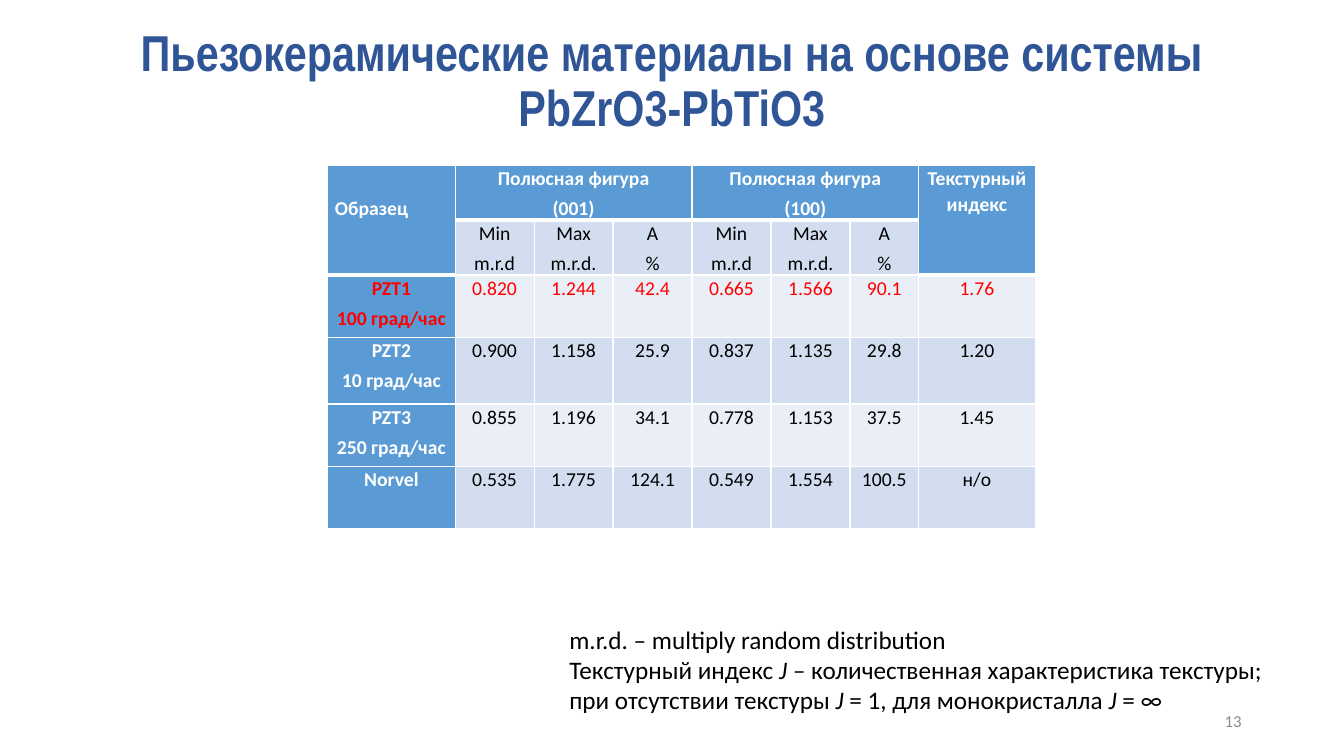
"""Build the slide on the texture of PbZrO3-PbTiO3 piezoceramic materials."""
from lxml import etree
from pptx import Presentation
from pptx.dml.color import RGBColor
from pptx.enum.text import MSO_ANCHOR, PP_ALIGN
from pptx.oxml.ns import qn
from pptx.util import Cm, Pt

LEFT, CENTER, RIGHT = PP_ALIGN.LEFT, PP_ALIGN.CENTER, PP_ALIGN.RIGHT
TOP, MIDDLE = MSO_ANCHOR.TOP, MSO_ANCHOR.MIDDLE
BLUE, RED, WHITE, BLACK = "5B9BD5", "FF0000", "FFFFFF", "000000"
BANDS = ["D2DEEF", "EAEFF7"]


def set_font(font, size, color, bold=False, name="Calibri"):
    font.name, font.size, font.bold = name, Pt(size), bold
    font.color.rgb = RGBColor.from_string(color)


def add_text(left, top, width, height, anchor):
    box = page.shapes.add_textbox(Cm(left), Cm(top), Cm(width), Cm(height))
    box.text_frame.word_wrap = True
    box.text_frame.vertical_anchor = anchor
    return box.text_frame


deck = Presentation()
deck.slide_width, deck.slide_height = Cm(33.87), Cm(19.05)
page = deck.slides.add_slide(deck.slide_layouts[6])

title = add_text(2.33, 0.64, 29.21, 2.9, MIDDLE).paragraphs[0]
title.text = "Пьезокерамические материалы на основе системы PbZrO3-PbTiO3"
title.alignment, title.line_spacing = CENTER, 0.9
set_font(title.font, 36, "2F5597", True, "Arial Narrow")

number = add_text(23.92, 17.66, 7.62, 1.01, MIDDLE).paragraphs[0]
number.text = "13"
number.alignment = RIGHT
set_font(number.font, 12, "8C8C8C")

measures = ["Min\nm.r.d", "Max\nm.r.d.", "A\n%"]
rows = [
    ["Образец", "Полюсная фигура\n(001)", "", "", "Полюсная фигура\n(100)", "", "", "Текстурный индекс"],
    ["", *measures, *measures, ""],
    ["PZT1\n100 град/час", "0.820", "1.244", "42.4", "0.665", "1.566", "90.1", "1.76"],
    ["PZT2\n10 град/час", "0.900", "1.158", "25.9", "0.837", "1.135", "29.8", "1.20"],
    ["PZT3\n250 град/час", "0.855", "1.196", "34.1", "0.778", "1.153", "37.5", "1.45"],
    ["Norvel", "0.535", "1.775", "124.1", "0.549", "1.554", "100.5", "н/о"],
]
column_widths = [3.21, 1.99, 1.99, 1.99, 1.99, 1.99, 1.73, 2.94]
row_heights = [1.3, 1.27, 1.57, 1.68, 1.57, 1.57]
table = page.shapes.add_table(
    len(rows), len(column_widths), Cm(8.26), Cm(4.17), Cm(sum(column_widths)), Cm(sum(row_heights))
).table
for column, width in zip(table.columns, column_widths):
    column.width = Cm(width)
for row, height in zip(table.rows, row_heights):
    row.height = Cm(height)

for r, values in enumerate(rows):
    for c, value in enumerate(values):
        cell = table.cell(r, c)
        tall_header = r < 2 and c in (0, 7)
        heading = r == 0 or c == 0 or tall_header
        cell.margin_left = cell.margin_right = Cm(0.18)
        cell.margin_top = Cm(0.75 if r == c == 0 else 0)
        cell.margin_bottom = Cm(0)
        properties = cell._tc.get_or_add_tcPr()
        for side in ("lnL", "lnR", "lnT", "lnB"):
            thick = side == "lnB" and (r == 0 or tall_header)
            line = etree.SubElement(properties, qn(f"a:{side}"), w=str(Pt(3 if thick else 1)))
            fill = etree.SubElement(line, qn("a:solidFill"))
            etree.SubElement(fill, qn("a:srgbClr"), val=WHITE)
        cell.fill.solid()
        cell.fill.fore_color.rgb = RGBColor.from_string(BLUE if heading else BANDS[(r + 1) % 2])
        cell.text = value
        color = RED if r == 2 else WHITE if heading else BLACK
        for para in cell.text_frame.paragraphs:
            para.alignment = LEFT if r == c == 0 else CENTER
            para.line_spacing, para.space_before = 1.07, Pt(3)
            set_font(para.font, 14, color, heading)

for first, last in [((0, 0), (1, 0)), ((0, 1), (0, 3)), ((0, 4), (0, 6)), ((0, 7), (1, 7))]:
    table.cell(*first).merge(table.cell(*last))

notes = [
    [("m.r.d. – multiply random distribution", False)],
    [("Текстурный индекс ", False), ("J – ", True), ("количественная характеристика текстуры;", False)],
    [("при отсутствии текстуры ", False), ("J ", True), ("= 1, для монокристалла ", False),
     ("J ", True), ("= ∞", False)],
]
legend = add_text(14.1, 15.6, 18.34, 2.57, TOP)
for i, spans in enumerate(notes):
    para = legend.add_paragraph() if i else legend.paragraphs[0]
    set_font(para.font, 18, BLACK)
    for text, italic in spans:
        span = para.add_run()
        span.text, span.font.italic = text, italic

deck.save("out.pptx")
